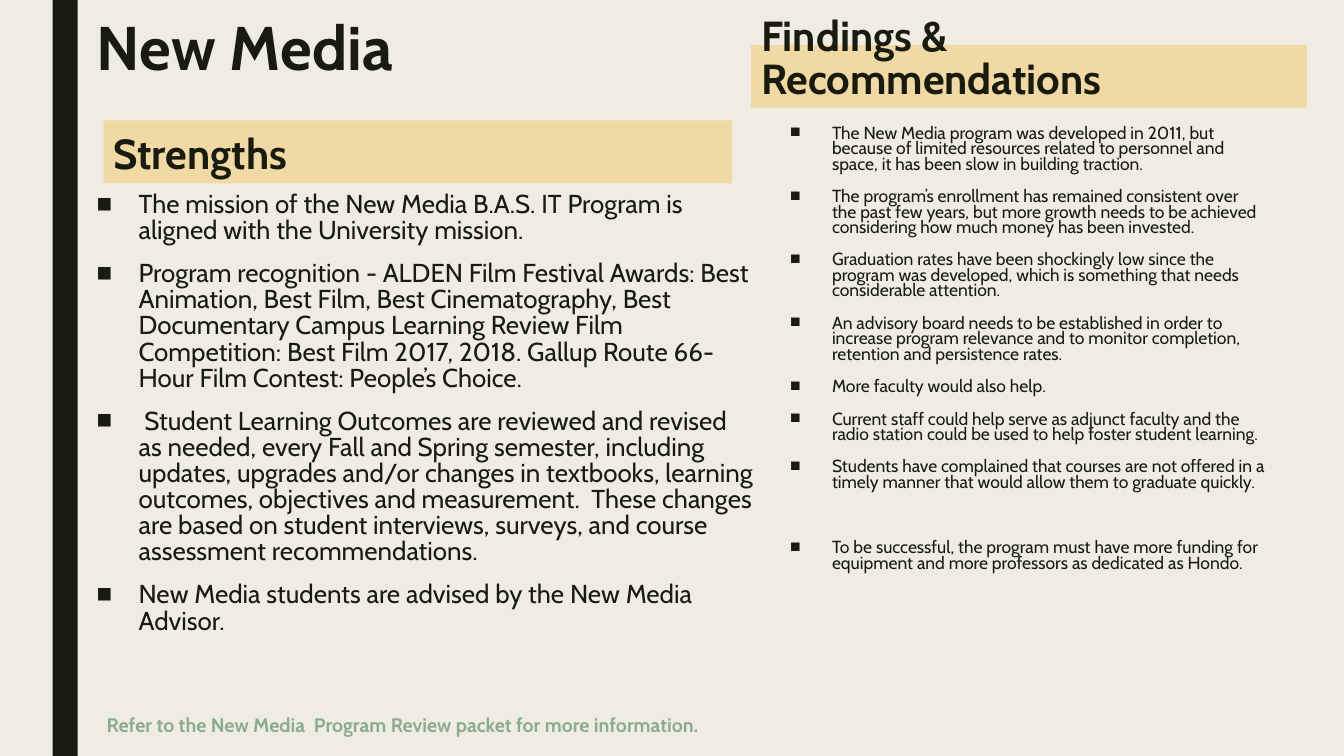
import pptx
import pptx.dml.color
import pptx.enum.shapes
import pptx.enum.text
import pptx.oxml.ns
import pptx.util
from lxml import etree

Pt = pptx.util.Pt
ALIGN = pptx.enum.text.PP_ALIGN
ANCHOR = pptx.enum.text.MSO_ANCHOR
FIT = pptx.enum.text.MSO_AUTO_SIZE

PAPER, INK, SAND, SAGE = "EFEDE3", "191B0E", "F0D9A5", "8DAB8E"
INDENT = 30

STRENGTHS = [
    "The mission of the New Media B.A.S. IT Program is aligned with the University mission.",
    "Program recognition - ALDEN Film Festival Awards: Best Animation, Best Film, "
    "Best Cinematography, Best Documentary Campus Learning Review Film Competition: "
    "Best Film 2017, 2018. Gallup Route 66-Hour Film Contest: People’s Choice.",
    " Student Learning Outcomes are reviewed and revised as needed, every Fall and Spring "
    "semester, including updates, upgrades and/or changes in textbooks, learning outcomes, "
    "objectives and measurement.  These changes are based on student interviews, surveys, "
    "and course assessment recommendations.",
    "New Media students are advised by the New Media Advisor.",
]
FINDINGS = [
    "The New Media program was developed in 2011, but because of limited resources related "
    "to personnel and space, it has been slow in building traction.",
    "The program’s enrollment has remained consistent over the past few years, but more "
    "growth needs to be achieved considering how much money has been invested.",
    "Graduation rates have been shockingly low since the program was developed, which is "
    "something that needs considerable attention.",
    "An advisory board needs to be established in order to increase program relevance and "
    "to monitor completion, retention and persistence rates.",
    "More faculty would also help.",
    "Current staff could help serve as adjunct faculty and the radio station could be used "
    "to help foster student learning.",
    "Students have complained that courses are not offered in a timely manner that would "
    "allow them to graduate quickly.",
    "To be successful, the program must have more funding for equipment and more professors "
    "as dedicated as Hondo.",
]


def rgb(code):
    return pptx.dml.color.RGBColor.from_string(code)


def apply(target, values):
    for name, value in values.items():
        setattr(target, name, value)


def set_frame(box, anchor=ANCHOR.TOP, fit=FIT.NONE):
    apply(box.text_frame, {"word_wrap": True, "vertical_anchor": anchor, "auto_size": fit})


def write(para, text, size, color=INK, bold=False, **layout):
    span = para.add_run()
    span.text = text
    apply(span.font, {"name": "Cabin", "size": Pt(size), "bold": bold})
    span.font.color.rgb = rgb(color)
    apply(para, {"alignment": ALIGN.LEFT, **layout})


def add_panel(page, area, color):
    panel = page.shapes.add_shape(
        pptx.enum.shapes.MSO_SHAPE.RECTANGLE, *map(Pt, area))
    panel.shadow.inherit = False
    panel.fill.solid()
    panel.fill.fore_color.rgb = rgb(color)
    panel.line.fill.background()
    return panel


def add_heading(page, area, text):
    panel = add_panel(page, area, SAND)
    set_frame(panel, ANCHOR.BOTTOM)
    write(panel.text_frame.paragraphs[0], text, 30, bold=True, line_spacing=0.84)


def add_bullet(para):
    props = para._p.get_or_add_pPr()
    props.set("marL", str(Pt(INDENT)))
    props.set("indent", str(-Pt(INDENT)))
    for tag, key, value in (("a:buFont", "typeface", "Arial"), ("a:buChar", "char", "■")):
        etree.SubElement(props, pptx.oxml.ns.qn(tag)).set(key, value)


def add_bullet_list(page, area, items, size, spacing):
    box = page.shapes.add_textbox(*map(Pt, area))
    set_frame(box)
    frame = box.text_frame
    for index, item in enumerate(items):
        para = frame.add_paragraph() if index else frame.paragraphs[0]
        write(para, item, size, line_spacing=spacing,
              space_before=Pt(10), space_after=Pt(2))
        add_bullet(para)
    return box


def set_title(page, area, text):
    title = page.shapes.title
    apply(title, dict(zip(("left", "top", "width", "height"), map(Pt, area))))
    set_frame(title)
    write(title.text_frame.paragraphs[0], text, 44, bold=True, line_spacing=0.89)


def add_note_line(page, area, text):
    box = page.shapes.add_textbox(*map(Pt, area))
    set_frame(box, fit=FIT.SHAPE_TO_FIT_TEXT)
    write(box.text_frame.paragraphs[0], text, 14, SAGE, True, alignment=ALIGN.CENTER)


def main():
    deck = pptx.Presentation()
    apply(deck, {"slide_width": Pt(960), "slide_height": Pt(540)})
    page = deck.slides.add_slide(deck.slide_layouts.get_by_name("Title Only"))
    page.background.fill.solid()
    page.background.fill.fore_color.rgb = rgb(PAPER)

    add_panel(page, (37.5, 0, 18, 540), INK)
    set_title(page, (62, 9.5, 756, 116.5), "New Media")
    add_heading(page, (74, 86, 448.75, 45), "Strengths")
    add_bullet_list(page, (62, 134, 484, 356.5), STRENGTHS, 18.5, 0.84)
    add_heading(page, (536.5, 32, 397, 45), "Findings & Recommendations")
    findings = add_bullet_list(page, (557.25, 87, 354, 411), FINDINGS, 12.5, 0.74)
    findings.text_frame.paragraphs[-1].space_before = Pt(33.5)
    add_note_line(page, (18, 506, 539.5, 24.5),
                  "Refer to the New Media  Program Review packet for more information.")
    deck.save("out.pptx")


if __name__ == "__main__":
    main()
